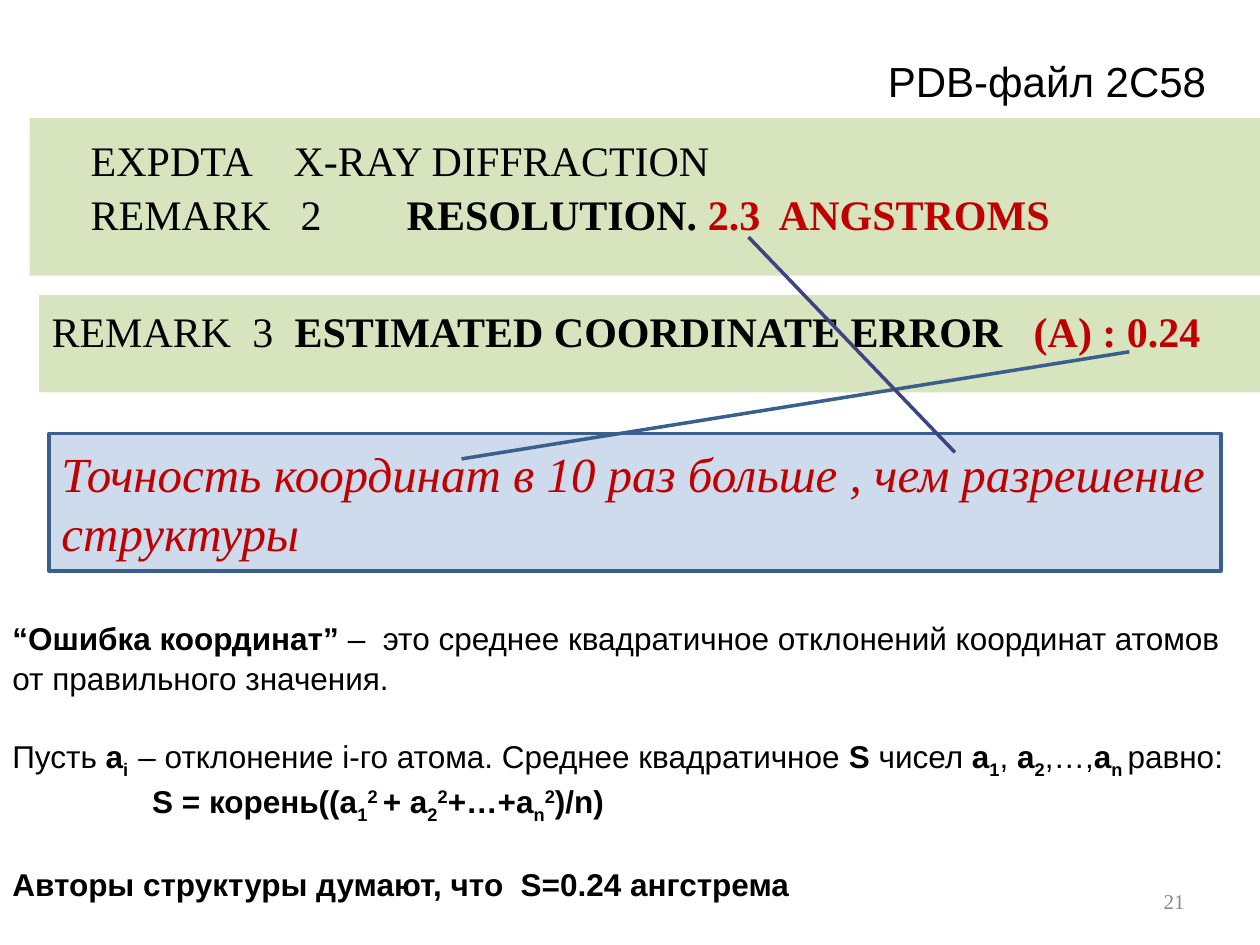
from lxml.etree import SubElement
from pptx import Presentation
from pptx.dml.color import RGBColor
from pptx.enum.shapes import MSO_CONNECTOR, MSO_SHAPE
from pptx.enum.text import MSO_ANCHOR, PP_ALIGN
from pptx.oxml.ns import qn
from pptx.util import Cm, Pt

BLACK = RGBColor(0x00, 0x00, 0x00)
RED = RGBColor(0xC0, 0x00, 0x00)
GREEN = RGBColor(0xD7, 0xE4, 0xBD)
BLUE = RGBColor(0x4F, 0x81, 0xBD)
BORDER = RGBColor(0x3A, 0x5F, 0x8C)
INDIGO = RGBColor(0x3E, 0x44, 0x82)
GREY = RGBColor(0x89, 0x89, 0x89)
SERIF, SANS = "Times New Roman", "Arial"

BOLD = {"bold": True}
RED_BOLD = {"bold": True, "color": RED}
SUB = {"bold": True, "baseline": -25000}
SUPER = {"bold": True, "baseline": 30000}


class SlideBuilder:
    """Holds the text style and the current page and adds elements to it."""

    def __init__(self, page):
        self.page = page
        self.style = {"name": SERIF, "size": Pt(24), "bold": False, "italic": False}

    def fill_text(self, box, paragraphs, frame_format=None, **style):
        frame = box.text_frame
        values = {"word_wrap": True, "vertical_anchor": MSO_ANCHOR.TOP, **(frame_format or {})}
        for name, value in values.items():
            setattr(frame, name, value)
        for index, (layout, spans) in enumerate(paragraphs):
            para = frame.add_paragraph() if index else frame.paragraphs[0]
            self.lay_out(para, **layout)
            for text, changes in spans:
                self.add_span(para, text, {**style, **changes})

    def lay_out(self, para, tabs=(), margin=None, **values):
        properties = para._p.get_or_add_pPr()
        if margin:
            properties.set("marL", str(margin))
        if tabs:
            tab_list = SubElement(properties, qn("a:tabLst"))
            for position in tabs:
                SubElement(tab_list, qn("a:tab"), pos=str(Cm(position)), algn="l")
        for name, value in {"alignment": PP_ALIGN.LEFT, **values}.items():
            setattr(para, name, value)

    def add_span(self, para, text, changes):
        values = {**self.style, "color": BLACK, **changes}
        color, baseline = values.pop("color"), values.pop("baseline", None)
        span = para.add_run()
        span.text = text
        for name, value in values.items():
            setattr(span.font, name, value)
        span.font.color.rgb = color
        if baseline:
            span._r.get_or_add_rPr().set("baseline", str(baseline))

    def add_text(self, place, paragraphs, frame_format=None, **style):
        box = self.page.shapes.add_textbox(*map(Cm, place))
        self.fill_text(box, paragraphs, frame_format, **style)

    def add_panel(self, place, paragraphs, frame_format):
        box = self.page.shapes.add_shape(MSO_SHAPE.RECTANGLE, *map(Cm, place))
        box.shadow.inherit = False
        box.fill.solid()
        box.fill.fore_color.rgb = GREEN
        box.line.fill.background()
        self.fill_text(box, paragraphs, frame_format)

    def add_callout(self, place, pointer, paragraphs, **style):
        box = self.page.shapes.add_shape(MSO_SHAPE.LINE_CALLOUT_1, *map(Cm, place))
        for index, value in enumerate(pointer):
            box.adjustments[index] = value
        box.shadow.inherit = False
        box.fill.solid()
        box.fill.fore_color.rgb = BLUE
        color = box._element.spPr.find(qn("a:solidFill"))[0]
        SubElement(color, qn("a:alpha"), val="28000")
        box.line.color.rgb = BORDER
        box.line.width = Pt(2)
        self.fill_text(box, paragraphs, {"vertical_anchor": MSO_ANCHOR.MIDDLE}, **style)

    def add_line(self, *ends):
        line = self.page.shapes.add_connector(MSO_CONNECTOR.STRAIGHT, *map(Cm, ends))
        line.line.color.rgb = INDIGO
        line.line.width = Pt(2)
        SubElement(line._element.spPr, qn("a:effectLst"))


def main():
    deck = Presentation()
    deck.slide_width, deck.slide_height = Cm(25.4), Cm(19.05)
    builder = SlideBuilder(deck.slides.add_slide(deck.slide_layouts[6]))

    builder.add_panel((0.6, 2.38, 24.8, 3.18), [
        ({"tabs": [4.09]}, [("EXPDTA\tX-RAY DIFFRACTION", {})]),
        ({"tabs": [4.23, 6.37], "space_before": Pt(2)}, [
            ("REMARK\t2\t", {}), ("RESOLUTION. ", BOLD), ("2.3  ANGSTROMS", RED_BOLD)]),
    ], {"margin_left": Cm(1.23), "margin_top": Cm(0.34)})

    builder.add_panel((0.79, 5.95, 24.61, 1.96), [
        ({"tabs": [4.05, 4.9, 19.8]}, [
            ("REMARK\t3\t", {}), ("ESTIMATED COORDINATE ERROR\t", BOLD),
            ("(A) : 0.24", RED_BOLD)]),
    ], {"margin_top": Cm(0.2)})

    builder.add_text((17.65, 0.99, 7.01, 1.17), [({}, [("PDB-файл 2С58", {})])],
                     {"word_wrap": False}, name=SANS)

    builder.add_callout((0.99, 8.74, 23.62, 2.77), (0.185, 0.352, -0.595, 0.922), [
        ({}, [("Точность координат в 10 раз больше , чем разрешение структуры", {})]),
    ], size=Pt(28), italic=True, color=RED)

    builder.add_line(15.09, 4.78, 19.25, 9.12)

    spacing = {"line_spacing": 1.05}
    builder.add_text((0, 12.32, 25.4, 5.64), [
        (spacing, [
            ("“Ошибка координат”", BOLD),
            (" –  это среднее квадратичное отклонений координат атомов"
             " от правильного значения.", {})]),
        ({**spacing, "space_before": Pt(21.7)}, [
            ("Пусть ", {}), ("a", BOLD), ("i  ", SUB),
            ("– отклонение i-го атома. Среднее квадратичное ", {}),
            ("S ", BOLD), ("чисел ", {}), ("a", BOLD), ("1", SUB), (", ", {}),
            ("a", BOLD), ("2", SUB), (",…,", {}), ("a", BOLD), ("n ", SUB),
            ("равно:", {})]),
        ({**spacing, "margin": Cm(2.82)}, [
            ("S = корень((a", BOLD), ("1", SUB), ("2 ", SUPER), ("+ a", BOLD),
            ("2", SUB), ("2", SUPER), ("+…+a", BOLD), ("n", SUB), ("2", SUPER),
            (")/n)", BOLD)]),
        ({**spacing, "space_before": Pt(22)}, [
            ("Авторы структуры думают, что  S=0.24 ангстрема", BOLD)]),
    ], name=SANS, size=Pt(18))

    builder.add_text((18.21, 17.65, 5.92, 1.02), [
        ({"alignment": PP_ALIGN.RIGHT}, [("21", {})]),
    ], {"vertical_anchor": MSO_ANCHOR.MIDDLE}, size=Pt(12), color=GREY)

    deck.save("out.pptx")


if __name__ == "__main__":
    main()
